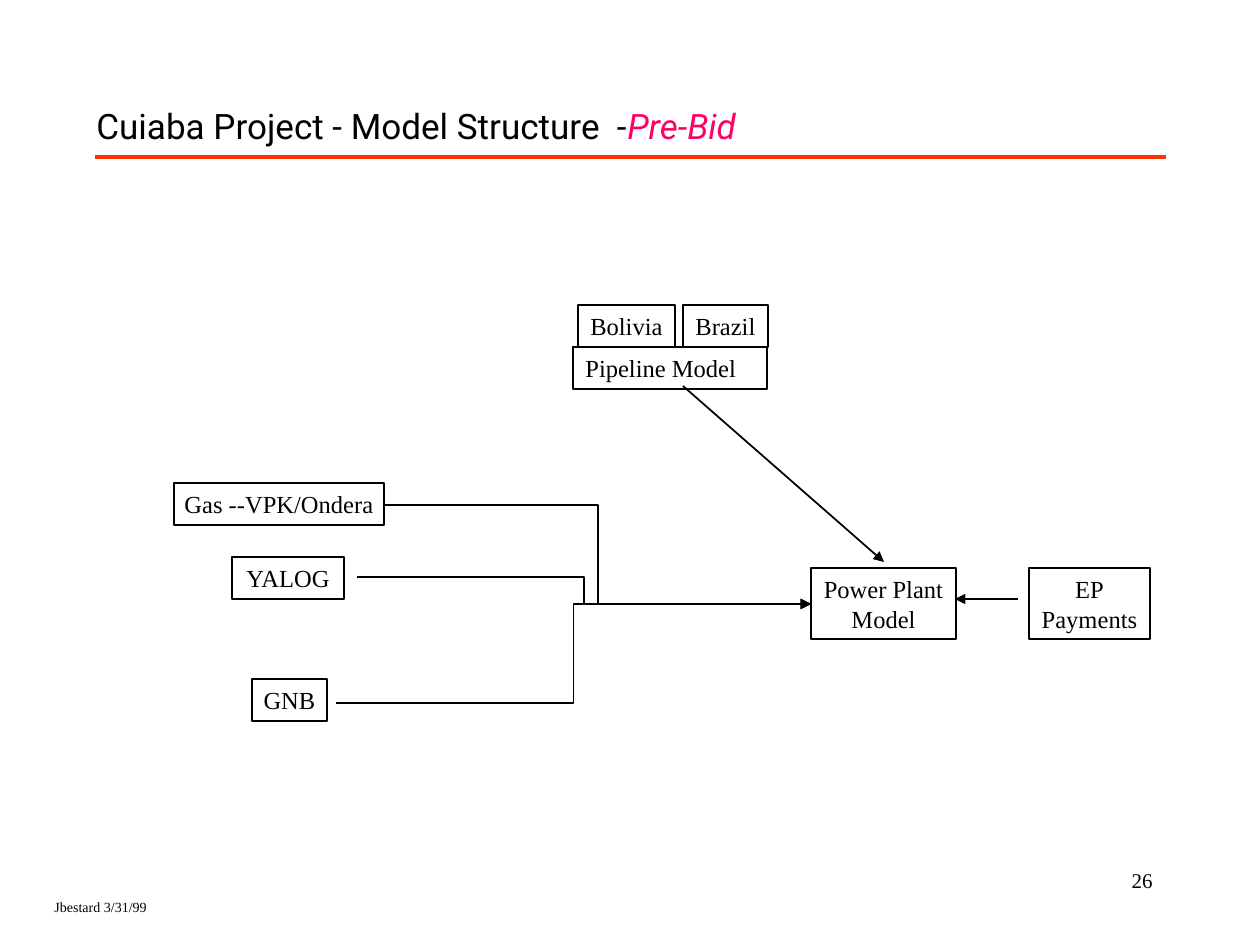
from dataclasses import dataclass

from lxml.etree import SubElement
from pptx import Presentation
from pptx.dml.color import RGBColor
from pptx.enum.shapes import MSO_CONNECTOR as CONN, MSO_SHAPE as SHAPE
from pptx.enum.text import MSO_ANCHOR as ANCHOR, PP_ALIGN as ALIGN
from pptx.oxml.ns import qn
from pptx.util import Emu, Pt

PX_PER_INCH = 126
BOX_HEIGHT = 42
TALL_BOX_HEIGHT = 71


@dataclass(frozen=True)
class Theme:
    ink: str = "000000"
    accent: str = "FF0066"
    rule: str = "FF3300"
    body_font: str = "Times New Roman"
    title_font: str = "Roboto"
    title_size: int = 20
    box_size: int = 14
    page_size: int = 12
    footer_size: int = 8
    line: float = 1
    elbow_line: float = 0.75
    rule_line: float = 2.25


THEME = Theme()


def px(n):
    return Emu(round(n * 914400 / PX_PER_INCH))


def rgb(value):
    return RGBColor.from_string(value)


def add_run(p, text, size=THEME.box_size, font=THEME.body_font,
            color=THEME.ink, italic=False):
    r = p.add_run()
    r.text = text
    r.font.size = Pt(size)
    r.font.name = font
    r.font.color.rgb = rgb(color)
    r.font.italic = italic


def set_text(sp, lines, align=ALIGN.LEFT, anchor=ANCHOR.TOP, wrap=True, **fmt):
    """Write one paragraph per line and return the last one."""
    tf = sp.text_frame
    tf.word_wrap = wrap
    tf.vertical_anchor = anchor
    for i, line in enumerate(lines):
        p = tf.add_paragraph() if i else tf.paragraphs[0]
        p.alignment = align
        add_run(p, line, **fmt)
    return p


def add_label(s, x, y, w, h, text, **fmt):
    sp = s.shapes.add_textbox(px(x), px(y), px(w), px(h))
    return set_text(sp, [text], **fmt)


def add_box(s, x, y, w, *lines, align=ALIGN.CENTER):
    h = BOX_HEIGHT if len(lines) == 1 else TALL_BOX_HEIGHT
    sp = s.shapes.add_shape(SHAPE.RECTANGLE, px(x), px(y), px(w), px(h))
    sp.shadow.inherit = False
    sp.fill.background()
    sp.line.color.rgb = rgb(THEME.ink)
    sp.line.width = Pt(THEME.line)
    set_text(sp, lines, align=align, wrap=False)


def add_line(s, start, end, kind=CONN.STRAIGHT, color=THEME.ink,
             width=THEME.line, arrow=True):
    c = s.shapes.add_connector(kind, *map(px, start + end))
    c.line.color.rgb = rgb(color)
    c.line.width = Pt(width)
    if arrow:
        SubElement(c.line._get_or_add_ln(), qn("a:tailEnd"), type="triangle")
    SubElement(c._element.spPr, qn("a:effectLst"))


def add_header(s):
    add_line(s, (95, 157), (1166, 157), color=THEME.rule,
             width=THEME.rule_line, arrow=False)
    title = dict(size=THEME.title_size, font=THEME.title_font)
    p = add_label(s, 84, 84, 1071, 84, "Cuiaba Project - Model Structure  -",
                  anchor=ANCHOR.MIDDLE, **title)
    add_run(p, "Pre-Bid", color=THEME.accent, italic=True, **title)


def add_footer(s):
    add_label(s, 42, 892, 147, 30, "Jbestard 3/31/99", size=THEME.footer_size)
    add_label(s, 903, 861, 262, 63, "26", align=ALIGN.RIGHT,
              size=THEME.page_size)


def add_models(s):
    add_box(s, 1029, 568, 121, "EP", "Payments")
    add_box(s, 811, 568, 145, "Power Plant", "Model")
    add_box(s, 573, 347, 194, "Pipeline Model", align=ALIGN.LEFT)
    add_box(s, 578, 305, 97, "Bolivia")
    add_box(s, 683, 305, 85, "Brazil")
    add_box(s, 174, 483, 210, "Gas --VPK/Ondera")
    add_box(s, 232, 557, 112, "YALOG")
    add_box(s, 252, 679, 75, "GNB")


def add_flows(s):
    add_line(s, (1018, 599), (955, 599))
    add_line(s, (683, 386), (884, 562))
    plant_inlet = (811, 604)
    for supply in ((336, 703), (385, 505), (357, 577)):
        add_line(s, supply, plant_inlet, kind=CONN.ELBOW,
                 width=THEME.elbow_line)


def main():
    prs = Presentation()
    prs.slide_width, prs.slide_height = px(1260), px(945)
    s = prs.slides.add_slide(prs.slide_layouts[6])
    add_header(s)
    add_models(s)
    add_flows(s)
    add_footer(s)
    prs.save("out.pptx")


if __name__ == "__main__":
    main()
